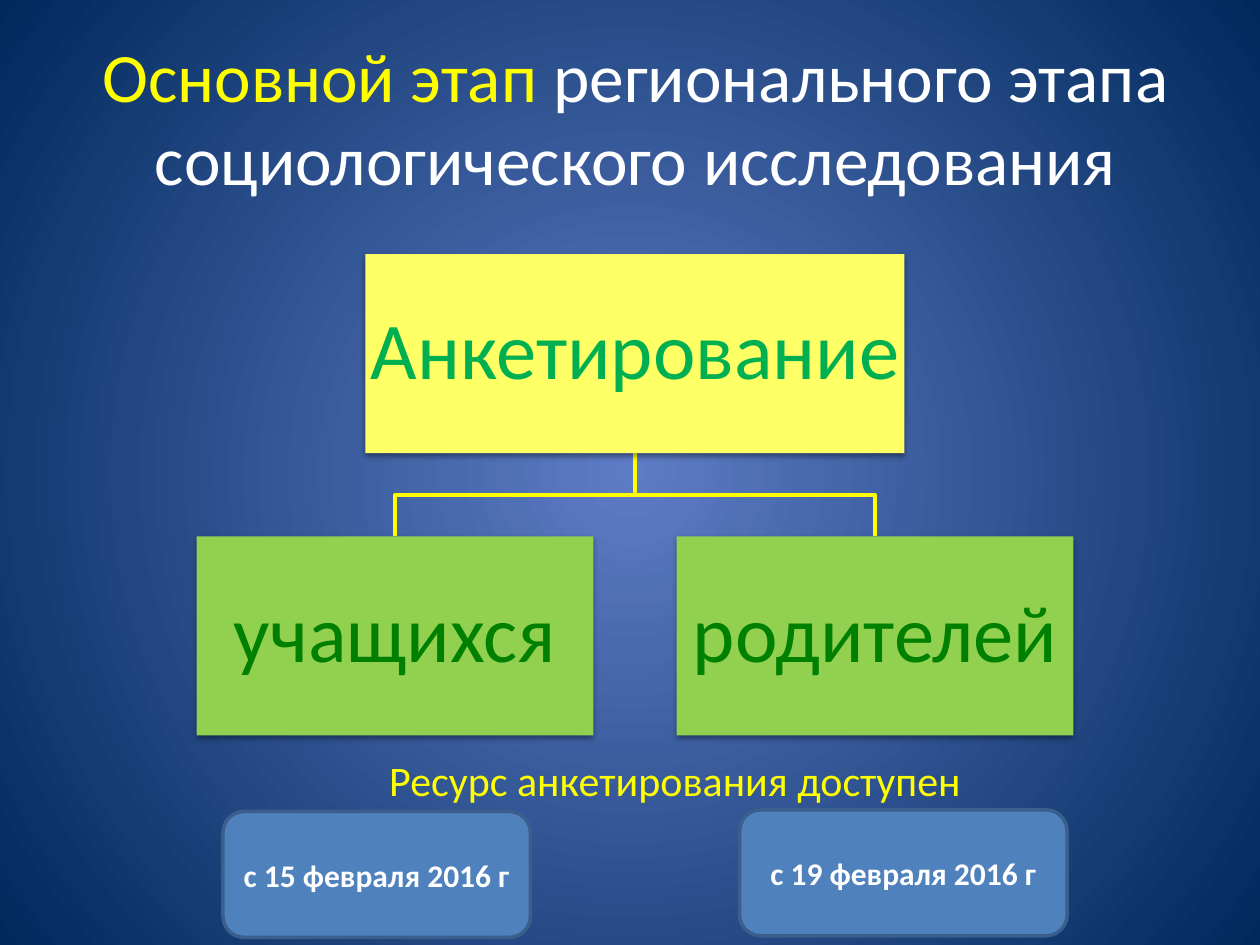
from typing import NamedTuple

import lxml.etree
import pptx
import pptx.dml.color
import pptx.enum.shapes
import pptx.enum.text
import pptx.oxml.ns
import pptx.util

FONT = "Calibri"
YELLOW = "FFFF00"
WHITE = "FFFFFF"


class Box(NamedTuple):
    """A rectangle on the slide, in EMU."""

    left: int
    top: int
    width: int
    height: int

    def portion(self, left, top, width, height):
        """Return an inner box given in percent of this one."""
        return Box(
            round(self.left + self.width * left / 100),
            round(self.top + self.height * top / 100),
            round(self.width * width / 100),
            round(self.height * height / 100),
        )

    @property
    def center(self):
        """Return the horizontal middle."""
        return self.left + self.width // 2

    @property
    def bottom(self):
        """Return the lower edge."""
        return self.top + self.height


def color(value):
    """Turn a hex string into a colour."""
    return pptx.dml.color.RGBColor.from_string(value)


def add_xml(parent, tag, **attributes):
    """Append a drawing element with its attributes."""
    return lxml.etree.SubElement(parent, pptx.oxml.ns.qn(tag), attributes)


def write(frame, *runs, size, bold=False, centered=True, wrap=True,
          inset=None, spacing=None):
    """Write runs of (text, colour) as one paragraph."""
    frame.word_wrap = wrap
    frame.vertical_anchor = pptx.enum.text.MSO_ANCHOR.MIDDLE
    if inset is not None:
        margin = pptx.util.Inches(inset)
        frame.margin_left = frame.margin_right = margin
        frame.margin_top = frame.margin_bottom = margin
    paragraph = frame.paragraphs[0]
    alignment = pptx.enum.text.PP_ALIGN
    paragraph.alignment = alignment.CENTER if centered else alignment.LEFT
    paragraph.line_spacing = spacing
    for text, tint in runs:
        run = paragraph.add_run()
        run.text = text
        run.font.name = FONT
        run.font.size = pptx.util.Pt(size)
        run.font.bold = bold
        run.font.color.rgb = color(tint)


def outline(shape, tint):
    """Give a shape a two-point line."""
    shape.line.color.rgb = color(tint)
    shape.line.width = pptx.util.Pt(2)


def add_panel(slide, box, kind, fill):
    """Add a filled shape without line or shadow."""
    shape = slide.shapes.add_shape(kind, *box)
    shape.shadow.inherit = False
    shape.fill.solid()
    shape.fill.fore_color.rgb = color(fill)
    shape.line.fill.background()
    return shape


def add_shadow(shape):
    """Add a soft shadow below a shape."""
    effects = shape._element.spPr.find(pptx.oxml.ns.qn("a:effectLst"))
    shadow = add_xml(effects, "a:outerShdw", blurRad="40000", dist="20000",
                     dir="5400000", rotWithShape="0")
    tint = add_xml(shadow, "a:srgbClr", val="000000")
    add_xml(tint, "a:alpha", val="38000")


def paint_background(slide):
    """Fill the slide with a radial blue gradient."""
    fill = slide.background.fill
    fill.gradient()
    for stop, tint in zip(fill.gradient_stops, ("5E7CC5", "00295C")):
        stop.color.rgb = color(tint)
    linear = next(slide._element.iter(pptx.oxml.ns.qn("a:lin")))
    gradient = linear.getparent()
    gradient.remove(linear)
    circle = add_xml(gradient, "a:path", path="circle")
    add_xml(circle, "a:fillToRect", l="50000", t="50000", r="50000", b="50000")


def place_title(slide, box):
    """Place the two-colour title."""
    title = slide.shapes.title
    title.left, title.top, title.width, title.height = box
    title.text_frame.auto_size = pptx.enum.text.MSO_AUTO_SIZE.NONE
    write(title.text_frame, ("Основной этап ", YELLOW),
          ("регионального этапа социологического исследования", WHITE), size=39.6)


def add_branch(slide, parent, child):
    """Draw a stepped line from a parent box down to a child box."""
    middle = (parent.bottom + child.top) // 2
    builder = slide.shapes.build_freeform(parent.center, parent.bottom)
    builder.add_line_segments(
        [(parent.center, middle), (child.center, middle), (child.center, child.top)],
        close=False,
    )
    branch = builder.convert_to_shape()
    branch.shadow.inherit = False
    branch.fill.background()
    outline(branch, YELLOW)


def add_hierarchy(slide, box):
    """Draw the survey box with its two groups of respondents."""
    height, width = 41.36, 45.26
    root = box.portion(19.25, 0, 61.49, height)
    children = [box.portion(left, 100 - height, width, height) for left in (0, 100 - width)]
    for child in reversed(children):
        add_branch(slide, root, child)
    nodes = [
        (root, "Анкетирование", "FFFF66", "00B050"),
        (children[0], "учащихся", "92D050", "008000"),
        (children[1], "родителей", "92D050", "008000"),
    ]
    for place, text, fill, tint in nodes:
        panel = add_panel(slide, place, pptx.enum.shapes.MSO_SHAPE.RECTANGLE, fill)
        add_shadow(panel)
        write(panel.text_frame, (text, tint), size=46, inset=0.03, spacing=0.9)


def add_note(slide, box):
    """Add the line that introduces the dates."""
    frame = slide.shapes.add_textbox(*box).text_frame
    write(frame, ("Ресурс анкетирования доступен", YELLOW), size=24,
          centered=False, wrap=False)


def add_date(slide, box, text):
    """Add a rounded box with a starting date."""
    panel = add_panel(slide, box, pptx.enum.shapes.MSO_SHAPE.ROUNDED_RECTANGLE, "4F81BD")
    outline(panel, "3A5F8C")
    write(panel.text_frame, (text, WHITE), size=18, bold=True)


def main():
    """Build and save the slide."""
    presentation = pptx.Presentation()
    presentation.slide_width = pptx.util.Inches(10)
    presentation.slide_height = pptx.util.Inches(7.5)
    page = Box(0, 0, presentation.slide_width, presentation.slide_height)
    slide = presentation.slides.add_slide(presentation.slide_layouts[5])
    paint_background(slide)
    place_title(slide, page.portion(2, 4, 96.9, 16.67))
    add_hierarchy(slide, page.portion(15.6, 26.9, 69.6, 50.93))
    add_note(slide, page.portion(29.9, 79.2, 47.9, 6.67))
    add_date(slide, page.portion(17.7, 85.87, 24.4, 13.33), "с 15 февраля 2016 г")
    add_date(slide, page.portion(58.7, 85.7, 26, 13.33), "с 19 февраля 2016 г")
    presentation.save("out.pptx")


if __name__ == "__main__":
    main()
